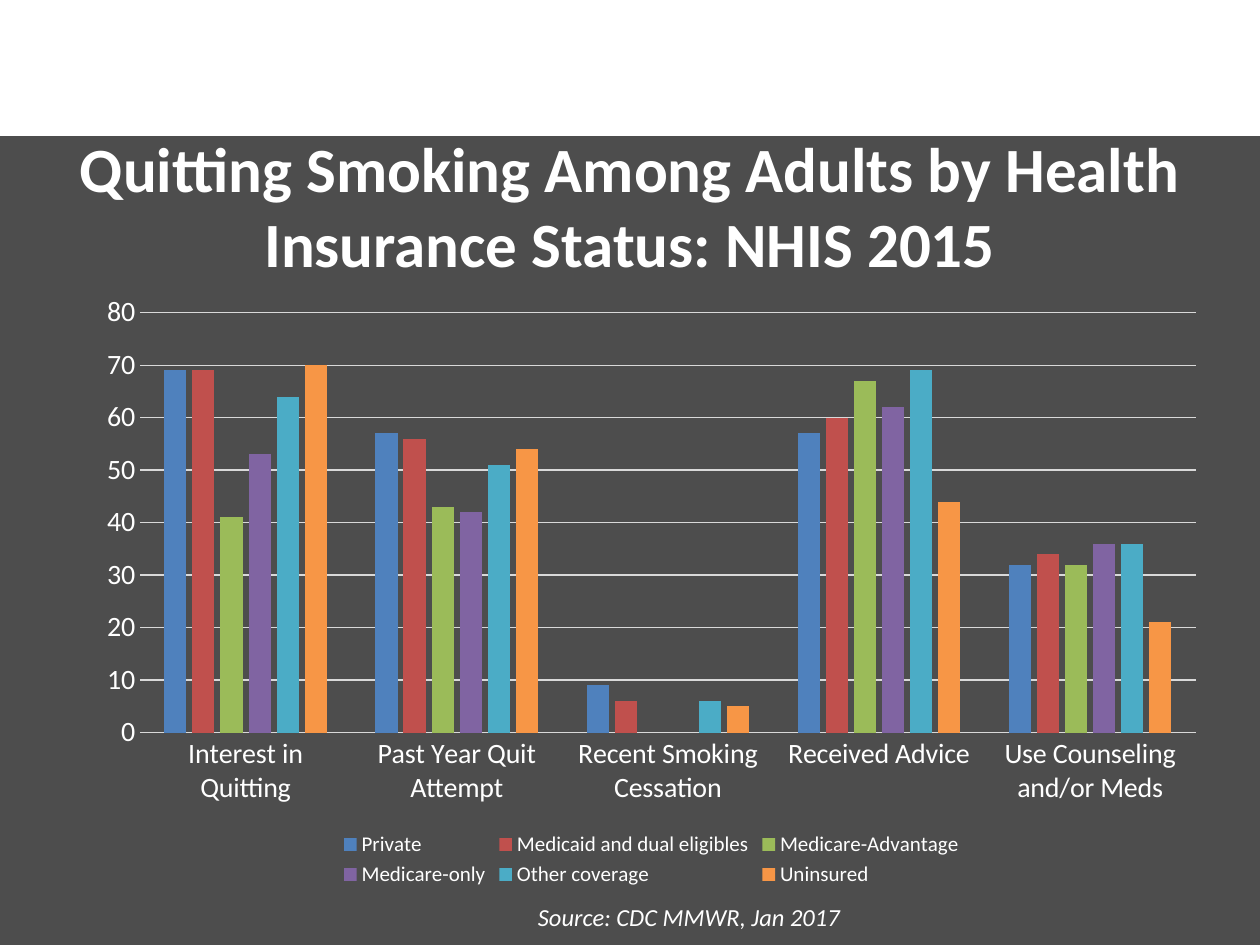
from pptx import Presentation
from pptx.chart.data import CategoryChartData
from pptx.dml.color import RGBColor
from pptx.enum.chart import XL_CHART_TYPE as CT, XL_LEGEND_POSITION as LP, XL_TICK_MARK as TM
from pptx.enum.shapes import MSO_SHAPE
from pptx.enum.text import MSO_ANCHOR, MSO_AUTO_SIZE, PP_ALIGN
from pptx.util import Inches, Pt

FONT = "Calibri"
WHITE = RGBColor(0xFF, 0xFF, 0xFF)
DARK = RGBColor(0x4D, 0x4D, 0x4D)
RULE = RGBColor(0xD9, 0xD9, 0xD9)
BLUE = RGBColor(0x4F, 0x81, 0xBD)
RED = RGBColor(0xC0, 0x50, 0x4D)
GREEN = RGBColor(0x9B, 0xBB, 0x59)
PURPLE = RGBColor(0x80, 0x64, 0xA2)
TEAL = RGBColor(0x4B, 0xAC, 0xC6)
ORANGE = RGBColor(0xF7, 0x96, 0x46)

CATEGORIES = ["Interest in Quitting", "Past Year Quit Attempt", "Recent Smoking Cessation",
              "Received Advice", "Use Counseling and/or Meds"]
SERIES = [
    ("Private", (69, 57, 9, 57, 32), BLUE),
    ("Medicaid and dual eligibles", (69, 56, 6, 60, 34), RED),
    ("Medicare-Advantage", (41, 43, None, 67, 32), GREEN),
    ("Medicare-only", (53, 42, None, 62, 36), PURPLE),
    ("Other coverage", (64, 51, 6, 69, 36), TEAL),
    ("Uninsured", (70, 54, 5, 44, 21), ORANGE),
]


def style_font(font, size, bold=False, italic=False):
    font.name, font.size = FONT, Pt(size)
    font.bold, font.italic = bold, italic
    font.color.rgb = WHITE


def write(tf, text, size, align=PP_ALIGN.LEFT, **fmt):
    p = tf.paragraphs[0]
    p.alignment = align
    r = p.add_run()
    r.text = text
    style_font(r.font, size, **fmt)


def rule(line):
    line.color.rgb = RULE
    line.width = Pt(0.75)


def add_backdrop(slide, box):
    sp = slide.shapes.add_shape(MSO_SHAPE.RECTANGLE, *box)
    sp.shadow.inherit = False
    sp.fill.solid()
    sp.fill.fore_color.rgb = DARK
    sp.line.fill.background()
    slide.shapes._spTree.insert(2, sp._element)


def add_title(slide, box, text):
    sp = slide.shapes.title
    sp.left, sp.top, sp.width, sp.height = box
    tf = sp.text_frame
    tf.word_wrap = True
    tf.auto_size = MSO_AUTO_SIZE.NONE
    tf.vertical_anchor = MSO_ANCHOR.MIDDLE
    write(tf, text, 36, align=PP_ALIGN.CENTER, bold=True)


def add_bar_chart(slide, box):
    data = CategoryChartData(number_format="General")
    data.categories = CATEGORIES
    for name, values, _ in SERIES:
        data.add_series(name, values)
    chart = slide.shapes.add_chart(CT.COLUMN_CLUSTERED, *box, data).chart
    chart.has_title = False
    chart.font.name, chart.font.size = FONT, Pt(10)

    plot = chart.plots[0]
    plot.gap_width, plot.overlap = 219, -27
    plot.vary_by_categories = False
    for series, (_, _, color) in zip(plot.series, SERIES):
        series.invert_if_negative = False
        series.format.fill.solid()
        series.format.fill.fore_color.rgb = color

    cat, val = chart.category_axis, chart.value_axis
    for axis in (cat, val):
        axis.major_tick_mark = axis.minor_tick_mark = TM.NONE
        style_font(axis.tick_labels.font, 16)
    rule(cat.format.line)
    val.format.line.fill.background()
    val.minimum_scale, val.maximum_scale, val.major_unit = 0, 80, 10
    val.has_major_gridlines = True
    rule(val.major_gridlines.format.line)

    chart.has_legend = True
    chart.legend.position = LP.BOTTOM
    chart.legend.include_in_layout = False
    style_font(chart.legend.font, 12)


def add_source(slide, box, text):
    tf = slide.shapes.add_textbox(*box).text_frame
    tf.word_wrap = False
    tf.auto_size = MSO_AUTO_SIZE.SHAPE_TO_FIT_TEXT
    write(tf, text, 14, italic=True)


def main():
    prs = Presentation()
    prs.slide_width, prs.slide_height = Inches(10), Inches(7.5)

    def box(x, y, w, h):
        return (int(prs.slide_width * x / 100), int(prs.slide_height * y / 100),
                int(prs.slide_width * w / 100), int(prs.slide_height * h / 100))

    slide = prs.slides.add_slide(prs.slide_layouts[5])
    add_backdrop(slide, box(0, 14.4, 100, 85.6))
    add_title(slide, box(5, 13.33, 90, 16.67),
              "Quitting Smoking Among Adults by Health Insurance Status: NHIS 2015")
    add_bar_chart(slide, box(6.7, 30, 90, 64.4))
    add_source(slide, box(41.7, 94.8, 26.2, 4.5), "Source: CDC MMWR, Jan 2017")
    prs.save("out.pptx")


if __name__ == "__main__":
    main()
